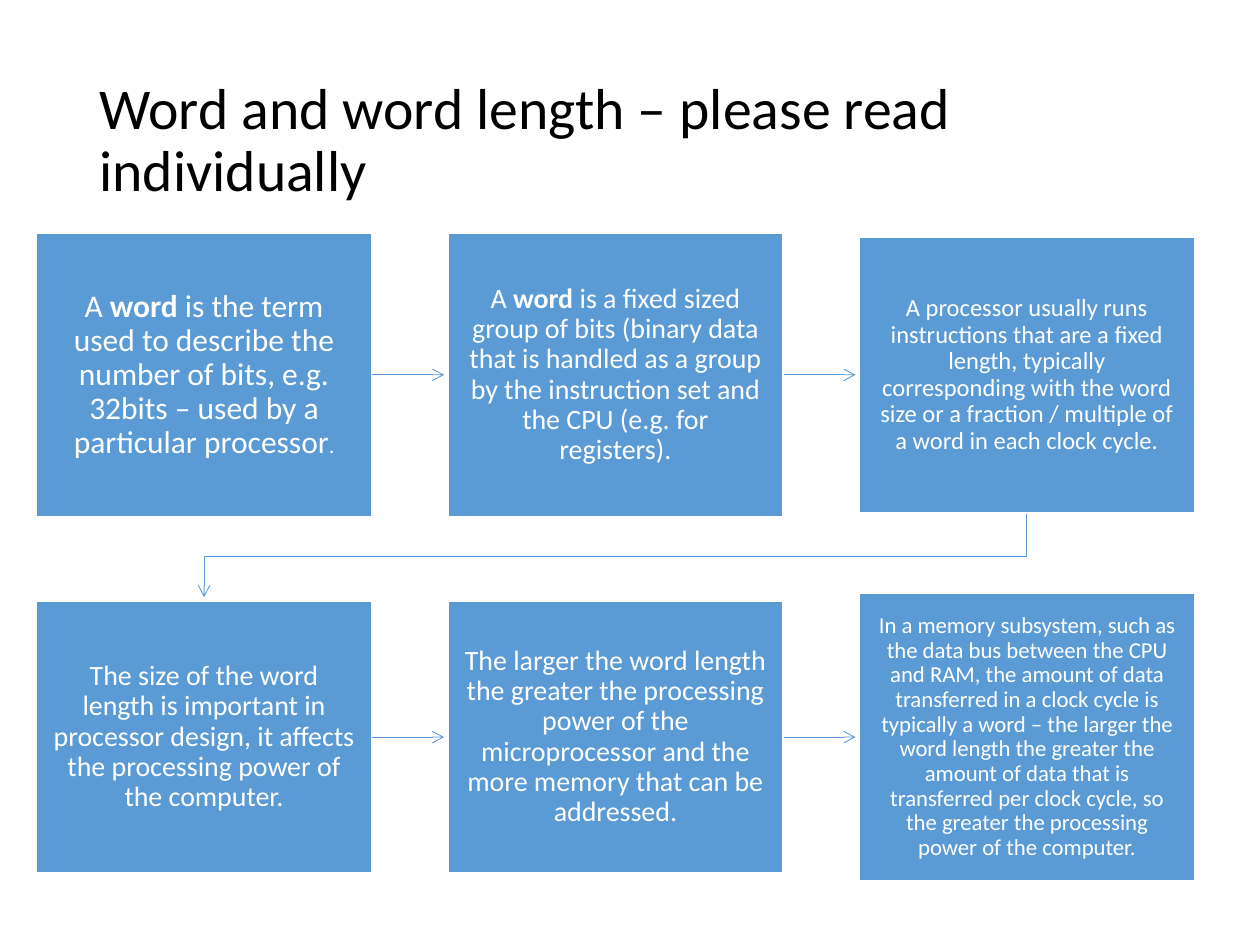
import pptx
import pptx.util
import pptx.dml.color
import pptx.enum.shapes
import pptx.enum.text
import pptx.oxml
import pptx.oxml.ns
from pptx.util import Inches

TITLE = "Word and word length – please read individually"

# Each step: text size, box height, runs as (text, bold, size override)
STEPS = [
    [
        (18, 2.25, [("A ", False, None), ("word", True, None),
                    (" is the term used to describe the number of bits, e.g. 32bits – "
                     "used by a particular processor", False, None), (".", False, 12)]),
        (16, 2.25, [("A ", False, None), ("word", True, None),
                    (" is a fixed sized group of bits (binary data that is handled as a group by "
                     "the instruction set and the CPU (e.g. for registers).", False, None)]),
        (14, 2.19, [("A processor usually runs instructions that are a fixed length, typically "
                     "corresponding with the word size or a fraction / multiple of a word in each "
                     "clock cycle.", False, None)]),
    ],
    [
        (16, 2.16, [("The size of the word length is important in processor design, it affects "
                     "the processing power of the computer.", False, None)]),
        (16, 2.16, [("The larger the word length the greater the processing power of the "
                     "microprocessor and the more memory that can be addressed.", False, None)]),
        (13, 2.28, [("In a memory subsystem, such as the data bus between the CPU and RAM, the "
                     "amount of data transferred in a clock cycle is typically a word – the larger "
                     "the word length the greater the amount of data that is transferred per clock "
                     "cycle, so the greater the processing power of the computer.", False, None)]),
    ],
]

THEME = {
    "font": "Calibri",
    "title_size": 33,
    "blue": pptx.dml.color.RGBColor(0x5B, 0x9B, 0xD5),
    "white": pptx.dml.color.RGBColor(0xFF, 0xFF, 0xFF),
    "black": pptx.dml.color.RGBColor(0, 0, 0),
}

LEFT, BOX_WIDTH, COLUMN_STEP = 0.29, 2.66, 3.265
ROW_CENTRES = (2.975, 5.85)
ARROW_CLEARANCE = 0.03
TURN_Y = 4.42


def column_left(column):
    return LEFT + column * COLUMN_STEP


def style_paragraph(paragraph, size, color):
    paragraph.line_spacing = 0.9
    paragraph.font.name = THEME["font"]
    paragraph.font.size = pptx.util.Pt(size)
    paragraph.font.color.rgb = color


def style_arrow(shape):
    """Thin blue line with an open arrowhead at its end and no shadow."""
    shape.line.color.rgb = THEME["blue"]
    shape.line.width = pptx.util.Pt(0.5)
    line = shape.line._get_or_add_ln()
    head = pptx.oxml.parse_xml(
        f'<a:tailEnd {pptx.oxml.ns.nsdecls("a")} type="arrow" w="med" len="med"/>')
    line.append(head)


def add_title(slide):
    box = slide.shapes.add_textbox(Inches(0.69), Inches(0.4), Inches(8.62), Inches(1.45))
    frame = box.text_frame
    frame.word_wrap = True
    frame.vertical_anchor = pptx.enum.text.MSO_ANCHOR.MIDDLE
    paragraph = frame.paragraphs[0]
    paragraph.text = TITLE
    style_paragraph(paragraph, THEME["title_size"], THEME["black"])


def add_step(slide, column, centre, size, height, runs):
    shape = slide.shapes.add_shape(
        pptx.enum.shapes.MSO_SHAPE.RECTANGLE, Inches(column_left(column)),
        Inches(centre - height / 2), Inches(BOX_WIDTH), Inches(height))
    shape.shadow.inherit = False
    shape.fill.solid()
    shape.fill.fore_color.rgb = THEME["blue"]
    shape.line.color.rgb = THEME["white"]
    shape.line.width = pptx.util.Pt(1)
    frame = shape.text_frame
    frame.word_wrap = True
    frame.vertical_anchor = pptx.enum.text.MSO_ANCHOR.MIDDLE
    frame.margin_left = frame.margin_right = Inches(0.13)
    frame.margin_top = frame.margin_bottom = Inches(0.14)
    paragraph = frame.paragraphs[0]
    paragraph.alignment = pptx.enum.text.PP_ALIGN.CENTER
    style_paragraph(paragraph, size, THEME["white"])
    for text, bold, run_size in runs:
        run = paragraph.add_run()
        run.text = text
        if bold:
            run.font.bold = True
        if run_size:
            run.font.size = pptx.util.Pt(run_size)


def add_row_arrow(slide, column, centre):
    """Arrow across the gap to the right of a column."""
    start = column_left(column) + BOX_WIDTH
    end = column_left(column + 1) - ARROW_CLEARANCE
    arrow = slide.shapes.add_connector(
        pptx.enum.shapes.MSO_CONNECTOR.STRAIGHT,
        Inches(start), Inches(centre), Inches(end), Inches(centre))
    style_arrow(arrow)
    arrow._element.spPr.append(
        pptx.oxml.parse_xml(f'<a:effectLst {pptx.oxml.ns.nsdecls("a")}/>'))


def add_return_arrow(slide):
    """Bent arrow from the end of the first row to the start of the second."""
    from_x = column_left(len(STEPS[0]) - 1) + BOX_WIDTH / 2
    to_x = column_left(0) + BOX_WIDTH / 2
    from_y = ROW_CENTRES[0] + STEPS[0][-1][1] / 2
    to_y = ROW_CENTRES[1] - STEPS[1][0][1] / 2 - ARROW_CLEARANCE
    builder = slide.shapes.build_freeform(Inches(from_x), Inches(from_y))
    corners = [(from_x, TURN_Y), (to_x, TURN_Y), (to_x, to_y)]
    builder.add_line_segments([(Inches(x), Inches(y)) for x, y in corners], close=False)
    arrow = builder.convert_to_shape()
    arrow.fill.background()
    style_arrow(arrow)
    arrow.shadow.inherit = False


def main():
    presentation = pptx.Presentation()
    presentation.slide_width, presentation.slide_height = Inches(10), Inches(7.5)
    slide = presentation.slides.add_slide(presentation.slide_layouts[6])
    add_return_arrow(slide)
    for centre, row in zip(ROW_CENTRES, STEPS):
        for column, (size, height, runs) in enumerate(row):
            if column + 1 < len(row):
                add_row_arrow(slide, column, centre)
            add_step(slide, column, centre, size, height, runs)
    add_title(slide)
    presentation.save("out.pptx")


if __name__ == "__main__":
    main()
